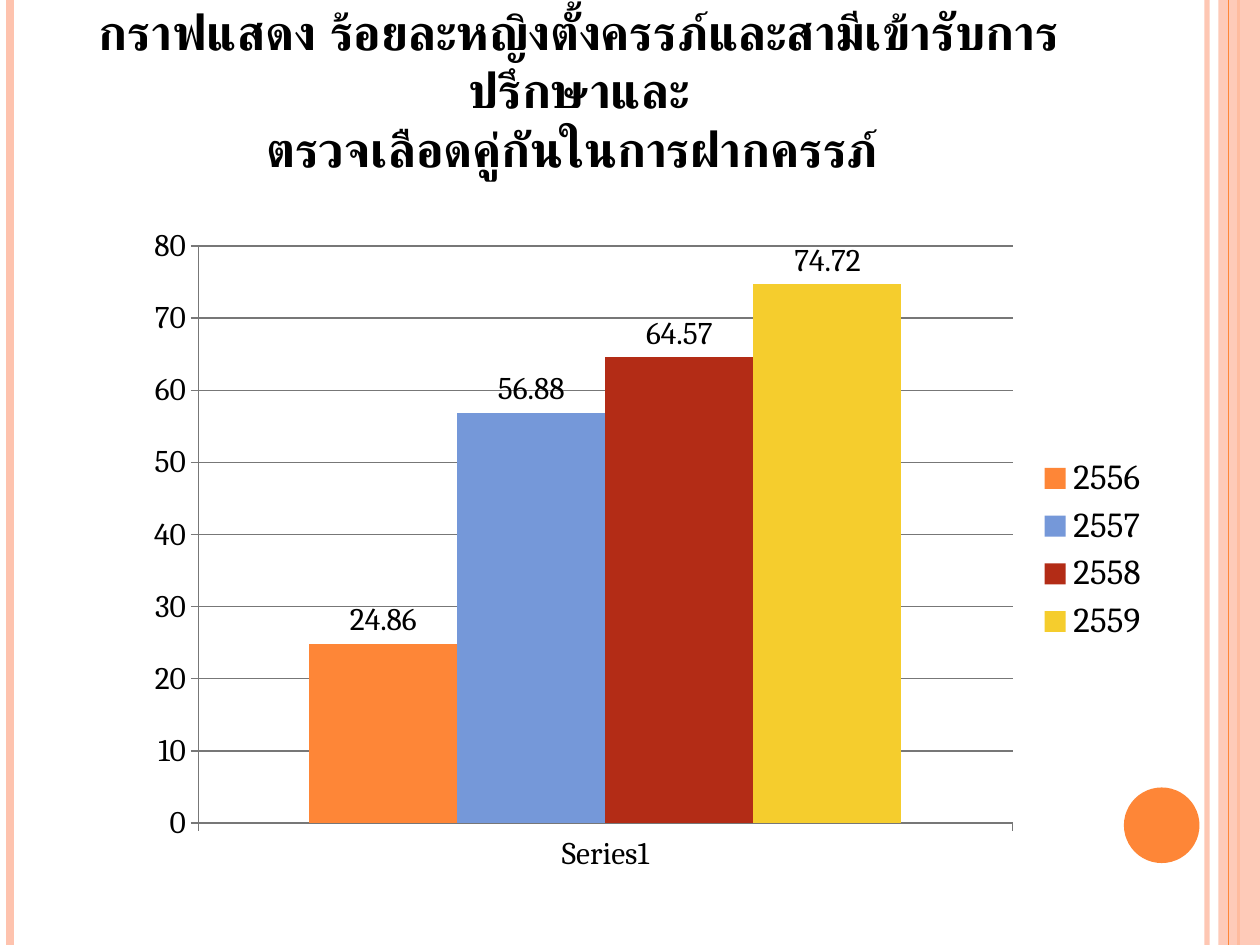
from lxml import etree
from pptx import Presentation
from pptx.chart.data import CategoryChartData
from pptx.dml.color import RGBColor
from pptx.enum.chart import (XL_CHART_TYPE, XL_LABEL_POSITION,
                             XL_LEGEND_POSITION, XL_TICK_MARK)
from pptx.enum.shapes import MSO_CONNECTOR, MSO_SHAPE
from pptx.enum.text import MSO_ANCHOR, MSO_AUTO_SIZE, PP_ALIGN
from pptx.oxml.ns import qn
from pptx.util import Inches, Pt

FONT = "Cambria"
BLACK, ORANGE, PEACH, GREY = "000000", "FE8637", "FEC3AE", "777777"
WIDTH, HEIGHT = 10, 7.5


def rgb(hex_color):
    return RGBColor.from_string(hex_color)


def set_alpha(element, percent):
    """Make the solid colour found inside an element partly transparent."""
    color = next(element.iter(qn("a:srgbClr")))
    etree.SubElement(color, qn("a:alpha")).set("val", str(percent * 1000))


class SlideBuilder:
    def __init__(self, slide, font):
        self.slide = slide
        self.font = font

    def style_font(self, font, size, color=BLACK, bold=False):
        font.name = self.font
        font.size = Pt(size)
        font.bold = bold
        font.color.rgb = rgb(color)

    def vertical_line(self, x, color, width, alpha=None):
        line = self.slide.shapes.add_connector(
            MSO_CONNECTOR.STRAIGHT, Inches(x), Inches(0), Inches(x), Inches(HEIGHT))
        line.line.color.rgb = rgb(color)
        line.line.width = Pt(width)
        sp_pr = line._element.spPr
        if alpha:
            set_alpha(sp_pr, alpha)
        etree.SubElement(sp_pr, qn("a:effectLst"))

    def shape(self, kind, box, color, alpha=None):
        sp = self.slide.shapes.add_shape(kind, *map(Inches, box))
        sp.shadow.inherit = False
        sp.fill.solid()
        sp.fill.fore_color.rgb = rgb(color)
        sp.line.fill.background()
        if alpha:
            set_alpha(sp._element.spPr, alpha)

    def title(self, box, lines, size, bottom_margin):
        tf = self.slide.shapes.add_textbox(*map(Inches, box)).text_frame
        tf.word_wrap = True
        tf.auto_size = MSO_AUTO_SIZE.NONE
        tf.vertical_anchor = MSO_ANCHOR.BOTTOM
        tf.margin_bottom = Inches(bottom_margin)
        p = tf.paragraphs[0]
        p.alignment = PP_ALIGN.CENTER
        for i, text in enumerate(lines):
            if i:
                p.add_line_break()
            r = p.add_run()
            r.text = text
            self.style_font(r.font, size, bold=True)

    def column_chart(self, box, category, series):
        """Clustered columns from (name, value, colour) triples."""
        data = CategoryChartData()
        data.categories = [category]
        for name, value, _ in series:
            data.add_series(name, [value])
        chart = self.slide.shapes.add_chart(
            XL_CHART_TYPE.COLUMN_CLUSTERED, *map(Inches, box), data).chart
        self.style_font(chart.font, 18)
        chart.has_title = False
        chart.has_legend = True
        chart.legend.position = XL_LEGEND_POSITION.RIGHT
        chart.legend.include_in_layout = False
        self.style_font(chart.legend.font, 20)

        plot = chart.plots[0]
        plot.vary_by_categories = False
        plot.gap_width = 150
        plot.overlap = 0
        for column, (_, _, color) in zip(plot.series, series):
            column.format.fill.solid()
            column.format.fill.fore_color.rgb = rgb(color)
            labels = column.data_labels
            labels.show_value = True
            labels.position = XL_LABEL_POSITION.OUTSIDE_END
            self.style_font(labels.font, 18)

        value_axis = chart.value_axis
        value_axis.minimum_scale = 0
        value_axis.maximum_scale = 80
        value_axis.major_unit = 10
        value_axis.has_major_gridlines = True
        for axis in (chart.category_axis, value_axis):
            axis.major_tick_mark = XL_TICK_MARK.OUTSIDE
            self.style_font(axis.tick_labels.font, 18)
        for part in (chart.category_axis, value_axis, value_axis.major_gridlines):
            part.format.line.color.rgb = rgb(GREY)
            part.format.line.width = Pt(0.75)


def main():
    prs = Presentation()
    prs.slide_width, prs.slide_height = Inches(WIDTH), Inches(HEIGHT)
    s = SlideBuilder(prs.slides.add_slide(prs.slide_layouts[6]), FONT)

    s.vertical_line(9.58, PEACH, 3, alpha=93)
    s.vertical_line(0.08, PEACH, 4.5)
    s.vertical_line(9.83, ORANGE, 1.5)
    s.shape(MSO_SHAPE.RECTANGLE, (9.67, 0, 0.33, HEIGHT), PEACH, alpha=87)
    s.vertical_line(9.75, ORANGE, 0.75)
    s.shape(MSO_SHAPE.OVAL, (8.92, 6.25, 0.6, 0.6), ORANGE)

    s.title((0.51, 0.68, 8.17, 1.25),
            ["กราฟแสดง ร้อยละหญิงตั้งครรภ์และสามีเข้ารับการปรึกษาและ",
             "ตรวจเลือดคู่กันในการฝากครรภ์ "],
            size=28, bottom_margin=0.52)
    s.column_chart((1.06, 1.7, 8.17, 5.33), "Series1", [
        ("2556", 24.86, ORANGE),
        ("2557", 56.88, "7598D9"),
        ("2558", 64.57, "B32C16"),
        ("2559", 74.72, "F5CD2D"),
    ])
    prs.save("out.pptx")


if __name__ == "__main__":
    main()
